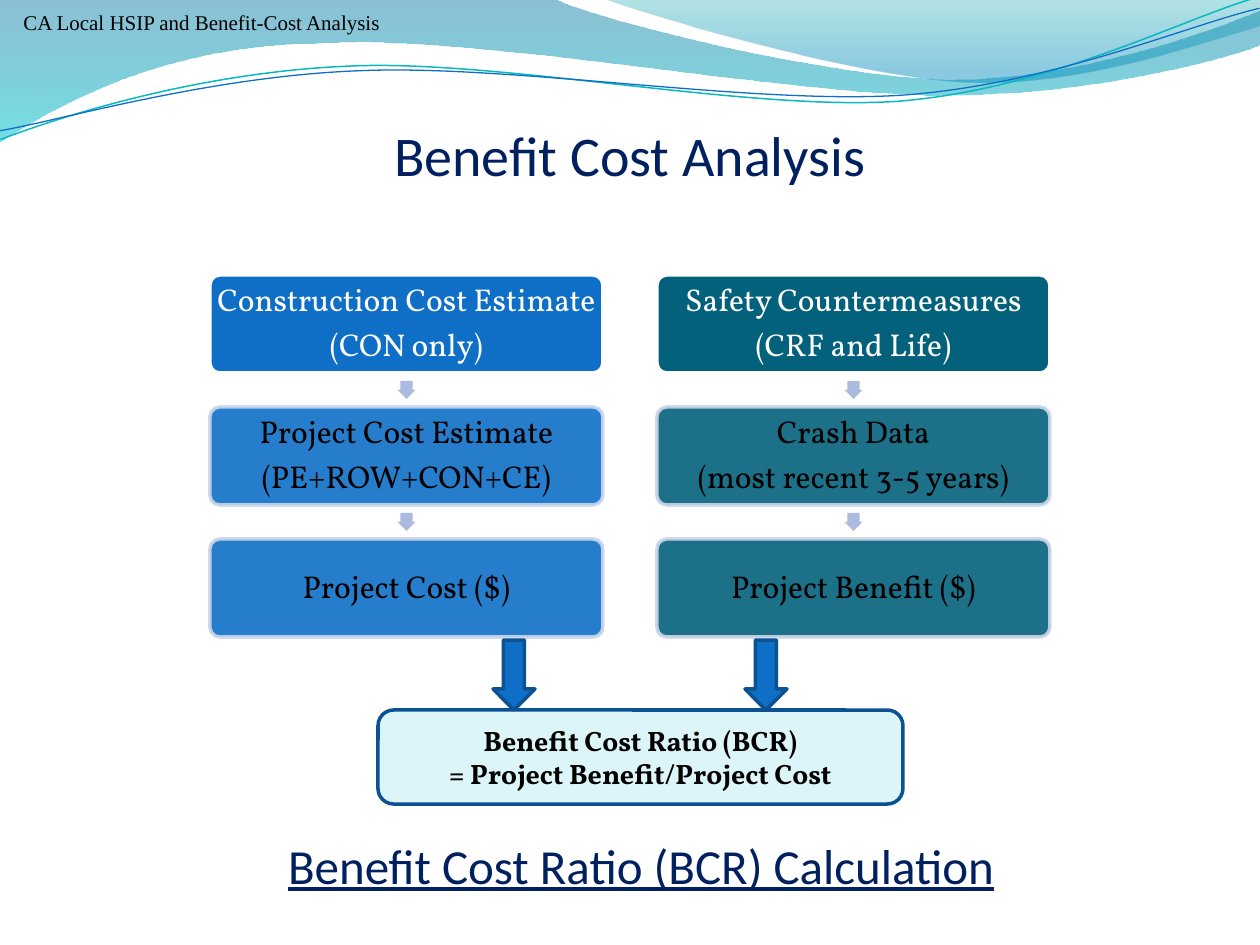
from lxml.etree import SubElement
from pptx import Presentation
from pptx.dml.color import RGBColor
from pptx.enum.shapes import MSO_SHAPE as Shape
from pptx.enum.text import MSO_ANCHOR as Anchor, MSO_AUTO_SIZE as AutoSize, PP_ALIGN as Align
from pptx.oxml.ns import qn
from pptx.util import Emu, Pt

EMU_PER_PX = 914400 / 126
COLOURS = {
    "white": "FFFFFF", "black": "000000", "navy": "002060",
    "blue": "0F6FC6", "dark blue": "0B5292", "teal": "04617B",
    "pale cyan": "DBF5F9", "arrow": "ABBBDF", "outline": "CCD5EA",
    "aqua line": "0AB8BF", "wave blue": "0074A1", "wave cyan": "00C6CF",
    "crest teal": "00A1A9", "crest blue": "008BBF",
}

# Paths: a start point, then lines (x, y) and cubic curves (x1, y1, x2, y2, x, y)
WAVE = [(0, -1), (554, -1), (600, 21, 837, 79, 955, 79), (1075, 79, 1207, 33, 1260, 11),
        (1261, 45), (1238, 55, 1096, 96, 940, 95), (784, 95, 481, 35, 324, 43),
        (163, 44, 58, 105, -1, 142)]
CREST = [(604, -1), (641, 14, 859, 78, 969, 82), (1079, 87, 1211, 40, 1260, 26), (1260, 0)]
AQUA_LINE = [(-2, 110), (58, 90, 199, 52, 350, 53), (499, 53, 745, 117, 896, 114),
             (1049, 109, 1184, 45, 1260, 27)]
BLUE_LINE = [(-2, 101), (57, 94, 207, 57, 357, 58), (509, 58, 750, 111, 902, 108),
             (1052, 104, 1187, 52, 1262, 38)]
LINE_ROTATION = -2.7

# Flow columns: left edge, fill, lines of each step
COLUMNS = [
    (210, "blue", [["Construction Cost Estimate", "(CON only)"],
                   ["Project Cost Estimate", "(PE+ROW+CON+CE)"],
                   ["Project Cost ($)"]]),
    (657, "teal", [["Safety Countermeasures", "(CRF and Life)"],
                   ["Crash Data", "(most recent 3-5 years)"],
                   ["Project Benefit ($)"]]),
]
STEP_TOP, STEP_PITCH, STEP_WIDTH, STEP_HEIGHT = 275, 132, 393, 98
ARROW_SIZE = 18


def px(value):
    return Emu(round(value * EMU_PER_PX))


def box(*lengths):
    return [px(length) for length in lengths]


def colour(name):
    return RGBColor.from_string(COLOURS[name])


def set_opacity(shape, *percents):
    """Give the shape's colours, in order, an opacity in percent."""
    colours = shape._element.spPr.iter(qn("a:srgbClr"))
    for element, percent in zip(colours, percents):
        SubElement(element, qn("a:alpha")).set("val", str(percent * 1000))


def set_line(shape, name, width):
    shape.line.color.rgb = colour(name)
    shape.line.width = Pt(width)


def write(shape, lines, size, name, font, align=Align.CENTER, bold=None, underline=None):
    frame = shape.text_frame
    frame.word_wrap = True
    frame.text = "\n".join(lines)
    for paragraph in frame.paragraphs:
        paragraph.alignment = align
        for run in paragraph.runs:
            run.font.size = Pt(size)
            run.font.name = font
            run.font.color.rgb = colour(name)
            run.font.bold = bold
            run.font.underline = underline


def set_margins(frame, left, top, right, bottom):
    frame.margin_left, frame.margin_top, frame.margin_right, frame.margin_bottom = box(
        left, top, right, bottom)


def add_heading(shape, text, size, underline=None):
    write(shape, [text], size, "navy", "Calibri", underline=underline)
    shape.text_frame.auto_size = AutoSize.NONE
    shape.text_frame.vertical_anchor = Anchor.BOTTOM
    set_margins(shape.text_frame, 0, 6, 0, 0)


def add_shape(slide, kind, bounds, fill, line=None, width=2):
    shape = slide.shapes.add_shape(kind, *box(*bounds))
    shape.shadow.inherit = False
    shape.fill.solid()
    shape.fill.fore_color.rgb = colour(fill)
    if line:
        set_line(shape, line, width)
    else:
        shape.line.fill.background()
    return shape


def add_path(slide, path, close):
    """Draw straight segments, then join each curve's three points into one Bézier."""
    points = [segment[i:i + 2] for segment in path for i in range(0, len(segment), 2)]
    corners = [box(*point) for point in points]
    builder = slide.shapes.build_freeform(*corners[0])
    builder.add_line_segments(corners[1:], close=close)
    shape = builder.convert_to_shape()
    shape.shadow.inherit = False
    segments = iter(list(shape._element.iter(qn("a:lnTo"))))
    for segment in path[1:]:
        first = next(segments)
        if len(segment) == 6:
            first.tag = qn("a:cubicBezTo")
            for _ in range(2):
                other = next(segments)
                first.append(other[0])
                other.getparent().remove(other)
    return shape


def add_wave(slide, path, stops):
    shape = add_path(slide, path, True)
    shape.line.fill.background()
    shape.fill.gradient()
    shape.fill.gradient_angle = 270
    for stop, (position, name, _) in zip(shape.fill.gradient_stops, stops):
        stop.position = position
        stop.color.rgb = colour(name)
    set_opacity(shape, *(opacity for _, _, opacity in stops))


def add_wave_line(slide, path, name, width):
    shape = add_path(slide, path, False)
    shape.rotation = LINE_ROTATION
    shape.fill.background()
    set_line(shape, name, width)


def add_step(slide, left, top, fill, lines, first):
    outline, text = ("white", "white") if first else ("outline", "black")
    shape = add_shape(slide, Shape.ROUNDED_RECTANGLE,
                      (left, top, STEP_WIDTH, STEP_HEIGHT), fill, outline)
    shape.adjustments[0] = 0.1
    if not first:
        set_opacity(shape, 90, 90)
    write(shape, lines, 18, text, "Vollkorn")
    shape.text_frame.vertical_anchor = Anchor.MIDDLE
    set_margins(shape.text_frame, 2, 4, 2, 4)
    for paragraph in shape.text_frame.paragraphs:
        paragraph.line_spacing = 0.9
        paragraph.space_after = Pt(6.3)


def add_step_arrow(slide, left, top):
    """Centre a small arrow in the gap above the step at left, top."""
    gap = STEP_PITCH - STEP_HEIGHT
    arrow = add_shape(slide, Shape.RIGHT_ARROW,
                      (left + (STEP_WIDTH - ARROW_SIZE) / 2, top - (gap + ARROW_SIZE) / 2,
                       ARROW_SIZE, ARROW_SIZE), "arrow")
    arrow.rotation = 90
    arrow.adjustments[0] = 0.67
    arrow.adjustments[1] = 0.5


def main():
    presentation = Presentation()
    presentation.slide_width, presentation.slide_height = box(1260, 945)
    slide = presentation.slides.add_slide(presentation.slide_layouts[5])

    # Wave banner and running header
    add_wave(slide, WAVE, [(0, "wave blue", 45), (1, "wave cyan", 55)])
    add_wave(slide, CREST, [(0, "crest teal", 30), (0.8, "crest blue", 45)])
    add_wave_line(slide, AQUA_LINE, "aqua line", 0.85)
    add_wave_line(slide, BLUE_LINE, "blue", 0.75)
    header = slide.shapes.add_textbox(*box(11, 3, 788, 38))
    write(header, ["CA Local HSIP and Benefit-Cost Analysis"], 12, "black",
          "Times New Roman", Align.LEFT)

    # Title
    title = slide.shapes.title
    title.left, title.top, title.width, title.height = box(63, 109, 1134, 79)
    add_heading(title, "Benefit Cost Analysis", 32)

    # Ratio box
    ratio = add_shape(slide, Shape.FLOWCHART_ALTERNATE_PROCESS, (378, 710, 525, 94),
                      "pale cyan", "dark blue")
    write(ratio, ["Benefit Cost Ratio (BCR)", "= Project Benefit/Project Cost"], 16,
          "black", "Vollkorn", bold=True)
    ratio.text_frame.vertical_anchor = Anchor.MIDDLE

    # Cost and benefit columns
    for left, fill, steps in COLUMNS:
        for index, lines in enumerate(steps):
            top = STEP_TOP + index * STEP_PITCH
            if index:
                add_step_arrow(slide, left, top)
            add_step(slide, left, top, fill, lines, index == 0)

    # Arrows into the ratio box
    for left in (493, 745):
        add_shape(slide, Shape.DOWN_ARROW, (left, 640, 42, 70), "blue", "dark blue")

    # Caption
    caption = slide.shapes.add_textbox(*box(74, 815, 1134, 79))
    add_heading(caption, "Benefit Cost Ratio (BCR) Calculation", 28, underline=True)

    presentation.save("out.pptx")


if __name__ == "__main__":
    main()
